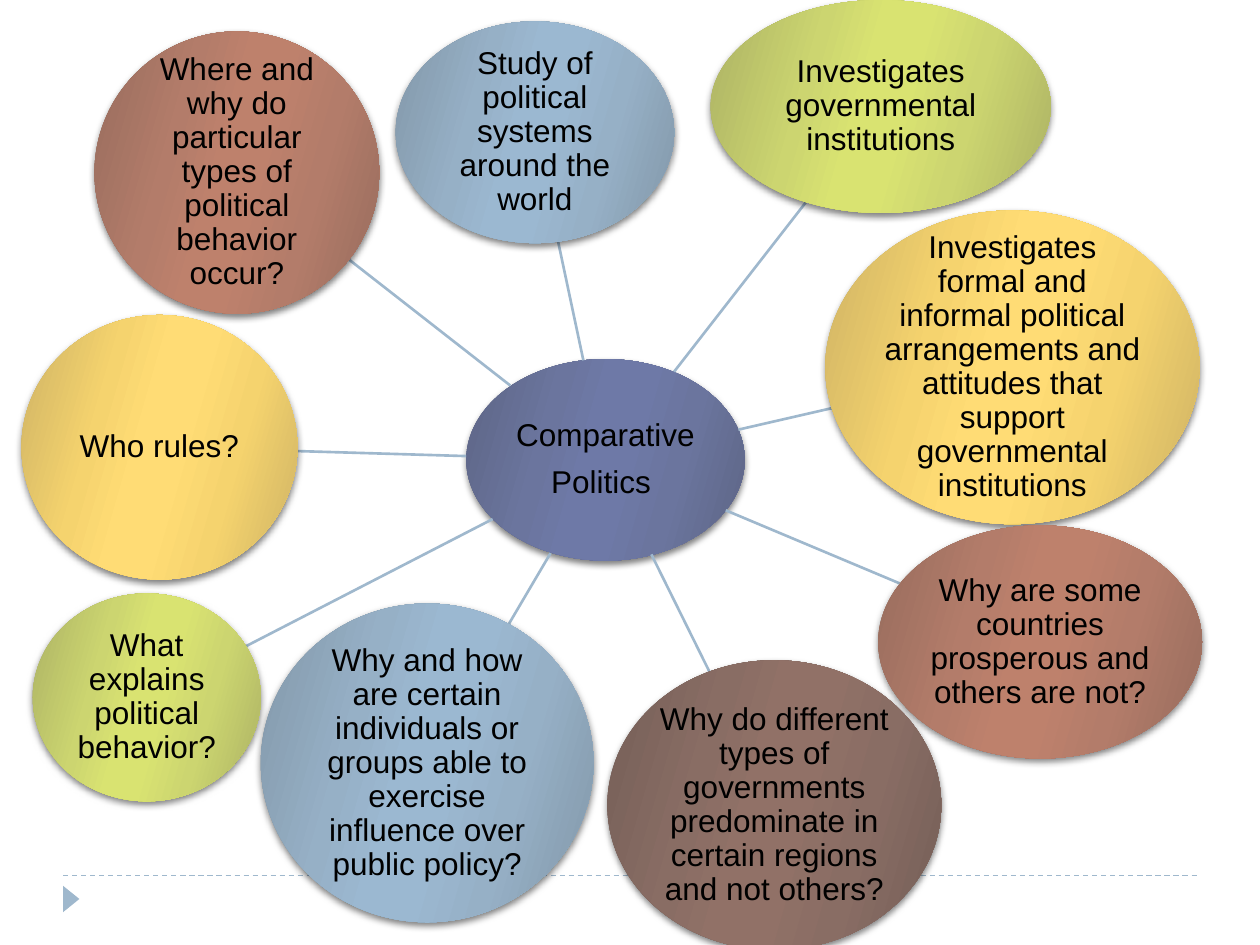
import math

from lxml import etree
from pptx import Presentation, util as u
from pptx.dml.color import RGBColor
from pptx.enum import dml, shapes, text
from pptx.oxml import parse_xml
from pptx.oxml.ns import nsdecls, qn

PX = 9144  # EMU per px, 100 px to the inch

# Edge, middle and core shade of each bubble colour
INDIGO = ("5D6585", "6B759E", "6E79A7")
BLUE = ("8297A8", "96B0C6", "9BB8D1")
LIME = ("ACB264", "CCD570", "D9E371")
YELLOW = ("CDB264", "F5D36E", "FFDC75")
RUST = ("976C5D", "B37C6A", "BE816C")
BROWN = ("745E57", "896D64", "917167")

HUB = (370, 285, 221, 160)
TOPICS = [
    ((314, 17, 221, 176), BLUE, "Study of political systems around the world"),
    ((564, 0, 270, 169), LIME, "Investigates governmental institutions"),
    ((655, 167, 297, 249), YELLOW,
     "Investigates formal and informal political arrangements and attitudes "
     "that support governmental institutions"),
    ((697, 417, 257, 185), RUST,
     "Why are some countries prosperous and others are not?"),
    ((482, 524, 265, 230), BROWN,
     "Why do different types of governments predominate in certain regions "
     "and not others?"),
    ((207, 479, 264, 253), BLUE,
     "Why and how are certain individuals or groups able to exercise "
     "influence over public policy?"),
    ((26, 471, 181, 165), LIME, "What explains political behavior?"),
    ((17, 250, 219, 210), YELLOW, "Who rules?"),
    ((75, 25, 226, 224), RUST,
     "Where and why do particular types of political behavior occur?"),
]


def rgb(value):
    return RGBColor.from_string(value)


def emu(*lengths):
    return [n * PX for n in lengths]


def center(box):
    x, y, w, h = box
    return x + w / 2, y + h / 2


def rim_point(box, target):
    """Where the ray from the ellipse's centre to target leaves the ellipse."""
    cx, cy = center(box)
    dx, dy = target[0] - cx, target[1] - cy
    t = 1 / math.hypot(dx / (box[2] / 2), dy / (box[3] / 2))
    return round(cx + t * dx), round(cy + t * dy)


def add_text(tf, lines, size=18, font="Arial", color="000000"):
    for i, line in enumerate(lines):
        p = tf.paragraphs[0] if i == 0 else tf.add_paragraph()
        p.alignment = text.PP_ALIGN.CENTER
        p.line_spacing = 0.9
        p.space_after = u.Pt(0.4 * size)
        r = p.add_run()
        r.text = line
        r.font.size = u.Pt(size)
        r.font.name = font
        r.font.color.rgb = rgb(color)


class Diagram:
    accent = "9FB8CD"
    stops = (0, 30, 45, 55, 73, 100)

    def __init__(self, slide):
        self.slide = slide

    def shape(self, kind, box):
        sp = self.slide.shapes.add_shape(kind, *emu(*box))
        sp.shadow.inherit = False
        sp.line.fill.background()
        return sp

    def line(self, start, end, width=1.5, dash=None):
        c = self.slide.shapes.add_connector(
            shapes.MSO_CONNECTOR.STRAIGHT, *emu(*start, *end))
        c.line.color.rgb = rgb(self.accent)
        c.line.width = u.Pt(width)
        if dash:
            c.line.dash_style = dash
        etree.SubElement(c._element.spPr, qn("a:effectLst"))

    def marker(self, box):
        sp = self.shape(shapes.MSO_SHAPE.ISOSCELES_TRIANGLE, box)
        sp.rotation = 90
        sp.fill.solid()
        sp.fill.fore_color.rgb = rgb(self.accent)

    def shade(self, sp, shades):
        """Gradient fill, dark at both edges, and a soft shadow below."""
        colors = shades + shades[::-1]
        stops = "".join(
            f'<a:gs pos="{pos * 1000}"><a:srgbClr val="{color}"/></a:gs>'
            for pos, color in zip(self.stops, colors))
        spPr = sp._element.spPr
        spPr.find(qn("a:prstGeom")).addnext(parse_xml(
            f'<a:gradFill {nsdecls("a")} rotWithShape="1"><a:gsLst>{stops}'
            '</a:gsLst><a:lin ang="960000" scaled="1"/></a:gradFill>'))
        spPr.find(qn("a:effectLst")).append(parse_xml(
            f'<a:outerShdw {nsdecls("a")} blurRad="{u.Pt(4)}" dist="{u.Pt(2)}" '
            'dir="5400000" rotWithShape="0"><a:srgbClr val="000000">'
            '<a:alpha val="50000"/></a:srgbClr></a:outerShdw>'))

    def bubble(self, box, shades, *lines):
        sp = self.shape(shapes.MSO_SHAPE.OVAL, box)
        self.shade(sp, shades)
        tf = sp.text_frame
        tf.word_wrap = True
        tf.vertical_anchor = text.MSO_ANCHOR.MIDDLE
        tf.margin_left = tf.margin_right = PX
        tf.margin_top = tf.margin_bottom = PX
        add_text(tf, lines)

    def link(self, a, b):
        self.line(rim_point(a, center(b)), rim_point(b, center(a)))


def main():
    prs = Presentation()
    prs.slide_width, prs.slide_height = emu(1000, 750)
    s = Diagram(prs.slides.add_slide(prs.slide_layouts[6]))

    s.line((50, 695), (950, 695), width=0.75, dash=dml.MSO_LINE.DASH)
    s.marker((46, 707, 21, 13))
    s.bubble(HUB, INDIGO, "Comparative", "Politics ")
    for box, shades, topic in TOPICS:
        s.link(HUB, box)
        s.bubble(box, shades, topic)

    prs.save("out.pptx")


if __name__ == "__main__":
    main()
